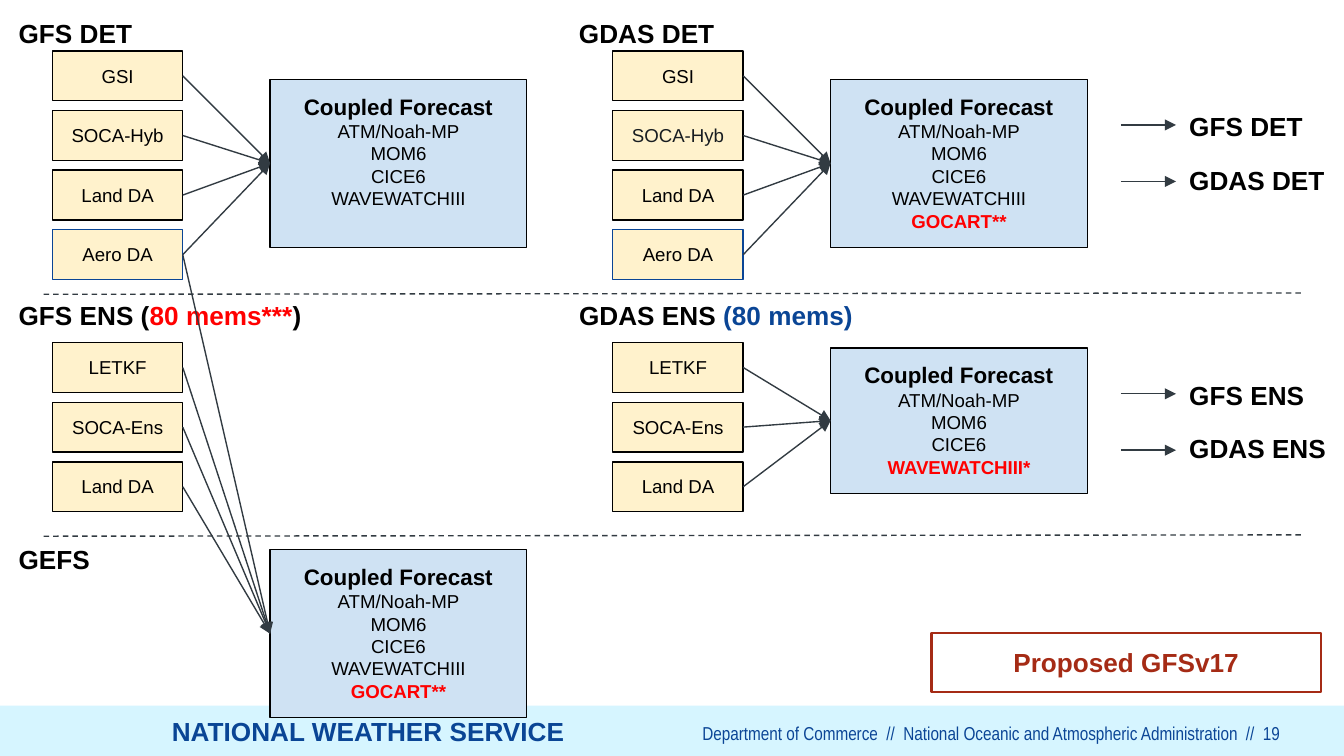
from dataclasses import dataclass
from lxml.etree import SubElement
from pptx import Presentation
from pptx.dml.color import RGBColor as RGB
from pptx.enum.dml import MSO_LINE as Dash
from pptx.enum.shapes import MSO_CONNECTOR as Conn, MSO_SHAPE as Shape
from pptx.enum.text import MSO_ANCHOR as Anchor, PP_ALIGN as Align
from pptx.oxml.ns import qn
from pptx.util import Inches, Pt


@dataclass(frozen=True)
class Theme:
    font: str = "Arial"
    narrow: str = "Arial Narrow"
    black: str = "000000"
    ink: str = "181D21"
    red: str = "FF0000"
    blue: str = "0A4595"
    foot: str = "0B4596"
    brick: str = "A52B15"
    slate: str = "323B42"
    cream: str = "FFF2CC"
    sky: str = "CFE2F3"
    band: str = "D6F5FF"
    big: int = 14
    mid: int = 12
    small: int = 10
    thin: float = 0.75
    thick: float = 1.5


T = Theme()

# Content: a run is (text, colour)
MODELS = ["ATM/Noah-MP", "MOM6", "CICE6"]
WAVE = "WAVEWATCHIII"
DET = ["GSI", "SOCA-Hyb", "Land DA", "Aero DA"]
ENS = ["LETKF", "SOCA-Ens", "Land DA"]

# (column, row, title runs, title width, steps)
GROUPS = [
    (0, "det", [("GFS DET", T.black)], 1.08, DET),
    (0, "ens", [("GFS ENS (", T.black), ("80 mems***", T.red), (")", T.black)], 2.52, ENS),
    (0, "gefs", [("GEFS", T.black)], 1.08, []),
    (1, "det", [("GDAS DET", T.black)], 1.24, DET),
    (1, "ens", [("GDAS ENS ", T.black), ("(80 mems)", T.blue)], 2.58, ENS),
]
# (column, row, plain models, red model, groups and steps that feed it)
CASTS = [
    (0, "det", MODELS + [WAVE], "", [("det", DET)]),
    (0, "gefs", MODELS + [WAVE], "GOCART**", [("det", DET[3:]), ("ens", ENS)]),
    (1, "det", MODELS + [WAVE], "GOCART**", [("det", DET)]),
    (1, "ens", MODELS, WAVE + "*", [("ens", ENS)]),
]
RESULTS = [("GFS DET", "GDAS DET"), ("GFS ENS", "GDAS ENS")]
SERVICE = "NATIONAL WEATHER SERVICE"
FOOTER = "Department of Commerce  //  National Oceanic and Atmospheric Administration  //  19"
STAMP = "Proposed GFSv17"

# Grid, in inches
WIDE = 10
HIGH = WIDE * 9 / 16
COL = 4.17
PITCH = 1.33 / 3
STEP_X, STEP_W, STEP_H = 0.39, 0.97, 0.37
CAST_X, CAST_W = 2.01, 1.91
TITLE_X, TITLE_H = 0.04, 0.44
TITLE_Y = {"det": 0.03, "ens": 2.13, "gefs": 3.94}
STEP_Y = {"det": 0.38, "ens": 2.55}
CAST_Y = {"det": (0.59, 1.25), "ens": (2.59, 1.08), "gefs": (4.09, 1.25)}
RULES = (2.18, 3.98)
OUT_X, OUT_GAP, OUT_Y = 8.75, 0.4, 0.72

deck = Presentation()
deck.slide_width, deck.slide_height = Inches(WIDE), Inches(HIGH)
slide = deck.slides.add_slide(deck.slide_layouts[6])


def style(font, size, color, bold=False, name=T.font):
    font.size, font.bold, font.name = Pt(size), bold, name
    font.color.rgb = RGB.from_string(color)


def frame(item, inset=0.1):
    tf = item.text_frame
    tf.word_wrap, tf.vertical_anchor = True, Anchor.TOP
    tf.margin_left = tf.margin_right = tf.margin_top = tf.margin_bottom = Inches(inset)
    return tf


def rect(x, y, w, h, fill=None, edge=None, weight=T.thin):
    box = slide.shapes.add_shape(Shape.RECTANGLE, *map(Inches, (x, y, w, h)))
    box.shadow.inherit = False
    if fill:
        box.fill.solid()
        box.fill.fore_color.rgb = RGB.from_string(fill)
    else:
        box.fill.background()
    if edge:
        box.line.color.rgb = RGB.from_string(edge)
        box.line.width = Pt(weight)
    else:
        box.line.fill.background()
    return box


def write(box, rows):
    """Fill a box with centred lines of (text, size, colour, bold)."""
    tf = frame(box)
    tf.text = "\n".join(row[0] for row in rows)
    for para, (_, *look) in zip(tf.paragraphs, rows):
        para.alignment = Align.CENTER
        style(para.runs[0].font, *look)


def label(x, y, w, h, runs, size=T.big, bold=True, name=T.font, inset=0.1):
    box = slide.shapes.add_textbox(*map(Inches, (x, y, w, h)))
    para = frame(box, inset).paragraphs[0]
    for text, color in runs:
        run = para.add_run()
        run.text = text
        style(run.font, size, color, bold, name)
    return para


def link(x1, y1, x2, y2, dash=False):
    """Draw a dashed rule or an arrow."""
    line = slide.shapes.add_connector(Conn.STRAIGHT, *map(Inches, (x1, y1, x2, y2)))
    line.line.color.rgb = RGB.from_string(T.slate)
    line.line.width = Pt(T.thin)
    if dash:
        line.line.dash_style = Dash.DASH
    else:
        SubElement(line.line._get_or_add_ln(), qn("a:tailEnd"), type="triangle")
    SubElement(line._element.spPr, qn("a:effectLst"))


def step_top(row, i):
    return STEP_Y[row] + i * PITCH


# Footer band
rect(0, 5.25, WIDE, HIGH - 5.25, T.band)
label(1.18, 5.22, 3.98, 0.51, [(SERVICE, T.blue)])
label(1.6, 5.37, 7.92, 0.13, [(FOOTER, T.foot)], T.small, False, T.narrow, 0).alignment = Align.RIGHT

# Analysis steps
for col, row, title, width, steps in GROUPS:
    label(TITLE_X + col * COL, TITLE_Y[row], width, TITLE_H, title)
    for i, name in enumerate(steps):
        edge = T.blue if name == "Aero DA" else T.black
        ink = T.ink if col and name == "SOCA-Hyb" else T.black
        box = rect(STEP_X + col * COL, step_top(row, i), STEP_W, STEP_H, T.cream, edge)
        write(box, [(name, T.small, ink, False)])

for y in RULES:
    link(9.68, y, 0.3, y + 0.01, dash=True)

# Forecasts and the arrows into them
for col, row, plain, hot, feeds in CASTS:
    x, (y, h) = CAST_X + col * COL, CAST_Y[row]
    rows = [("Coupled Forecast", T.mid, T.black, True)]
    rows += [(name, T.small, T.black, False) for name in plain]
    if hot:
        rows.append((hot, T.small, T.red, True))
    write(rect(x, y, CAST_W, h, T.sky, T.black), rows)
    for group, steps in feeds:
        names = DET if group == "det" else ENS
        for name in steps:
            mid = step_top(group, names.index(name)) + STEP_H / 2
            link(STEP_X + STEP_W + col * COL, mid, x, y + h / 2)

# Results
for i, pair in enumerate(RESULTS):
    for j, name in enumerate(pair):
        y = OUT_Y + 2 * i + j * OUT_GAP
        label(OUT_X, y, 1.24 if j else 1.08, TITLE_H, [(name, T.black)])
        mid = y + 0.21 + 0.02 * j
        link(OUT_X - 0.41, mid, OUT_X, mid)

write(rect(6.93, 4.71, 2.9, 0.44, None, T.brick, T.thick), [(STAMP, T.big, T.brick, True)])

deck.save("out.pptx")
